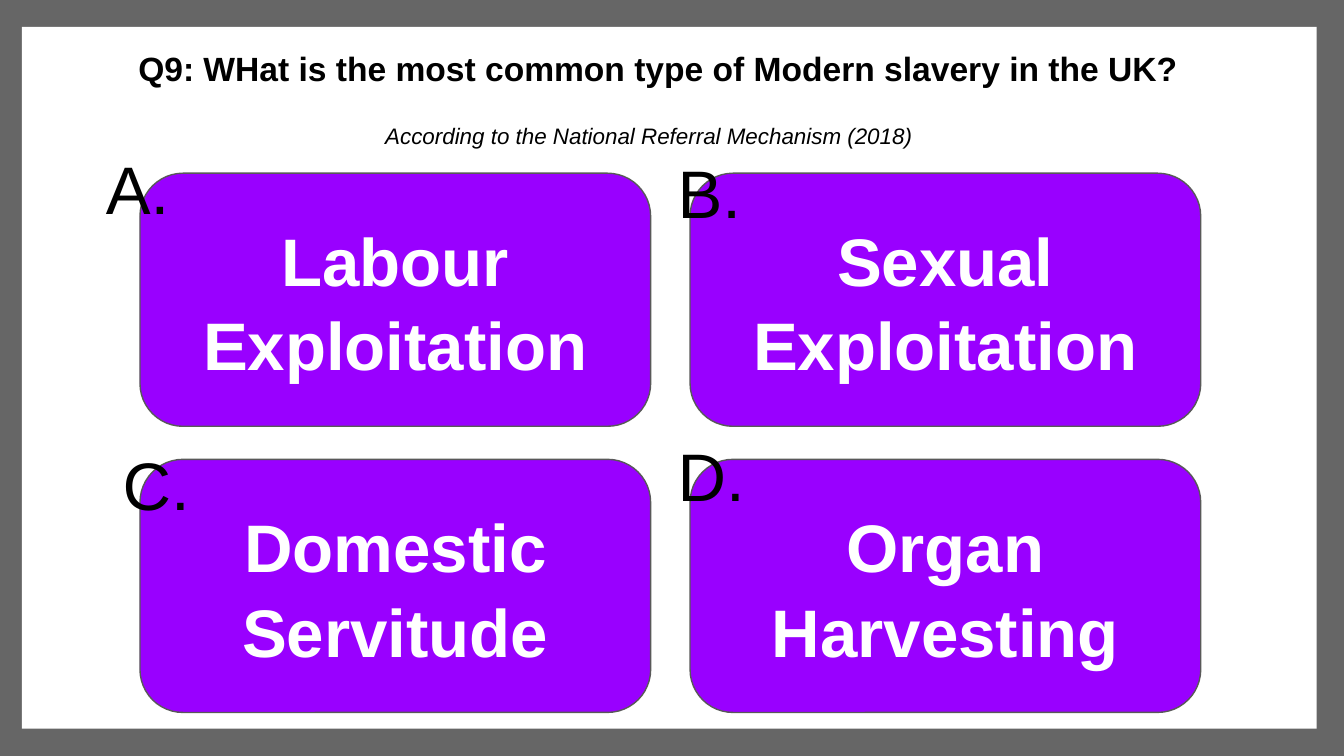
from pptx import Presentation
from pptx import util as u
from pptx.dml.color import RGBColor
from pptx.enum import shapes, text

COLOURS = {"frame": "666666", "paper": "FFFFFF", "answer": "9900FF",
           "outline": "595959", "ink": "000000"}


def write(box, words, size, colour="ink", bold=False, italic=False,
          align=text.PP_ALIGN.LEFT, anchor=text.MSO_ANCHOR.TOP):
    frame = box.text_frame
    frame.word_wrap = True
    frame.vertical_anchor = anchor
    frame.margin_left = frame.margin_right = u.Pt(7.2)
    frame.margin_top = frame.margin_bottom = u.Pt(7.2)
    para = frame.paragraphs[0]
    para.alignment = align
    para.line_spacing = 1.05
    span = para.add_run()
    span.text = words
    span.font.name = "Arial"
    span.font.size = u.Pt(size)
    span.font.bold = bold
    span.font.italic = italic
    span.font.color.rgb = RGBColor.from_string(COLOURS[colour])


class QuizPage:
    def __init__(self, page):
        self.page = page

    def panel(self, kind, left, top, width, height, fill, line=None):
        panel = self.page.shapes.add_shape(
            kind, u.Pt(left), u.Pt(top), u.Pt(width), u.Pt(height))
        panel.shadow.inherit = False
        panel.fill.solid()
        panel.fill.fore_color.rgb = RGBColor.from_string(COLOURS[fill])
        if line:
            panel.line.color.rgb = RGBColor.from_string(COLOURS[line])
            panel.line.width = u.Pt(0.75)
        else:
            panel.line.fill.background()
        return panel

    def rectangle(self, left, top, width, height, fill):
        self.panel(shapes.MSO_SHAPE.RECTANGLE, left, top, width, height, fill)

    def answer(self, words, left, top, width, height):
        card = self.panel(shapes.MSO_SHAPE.ROUNDED_RECTANGLE, left, top,
                          width, height, "answer", "outline")
        card.adjustments[0] = 0.17
        write(card, words, 36, "paper", bold=True,
              align=text.PP_ALIGN.CENTER, anchor=text.MSO_ANCHOR.MIDDLE)

    def label(self, words, left, top, width, height, size, **style):
        box = self.page.shapes.add_textbox(
            u.Pt(left), u.Pt(top), u.Pt(width), u.Pt(height))
        write(box, words, size, **style)


def main():
    deck = Presentation()
    deck.slide_width, deck.slide_height = u.Pt(720), u.Pt(405)
    quiz = QuizPage(deck.slides.add_slide(deck.slide_layouts[6]))

    # Grey frame around a white sheet
    quiz.rectangle(-1.5, 0, 721.5, 405, "frame")
    quiz.rectangle(11.7, 14.4, 693.6, 376, "paper")

    # Question
    quiz.label("Q9: WHat is the most common type of Modern slavery in the UK?",
               67, 17.3, 609, 38, 18, bold=True)

    # Answers in a two by two grid
    answers = ["Labour Exploitation", "Sexual Exploitation",
               "Domestic Servitude", "Organ Harvesting"]
    for index, words in enumerate(answers):
        row, column = divmod(index, 2)
        quiz.answer(words, 75 + column * 294.7, 92.8 + row * 153.3, 273.6, 135.6)

    # Source of the figures
    quiz.label("According to the National Referral Mechanism (2018)",
               199.3, 57.6, 307, 33, 12, italic=True)

    # Answer letters, placed by hand at the card corners
    letters = [("A.", 49.7, 69.8, 69), ("B.", 355.9, 71.6, 52),
               ("C.", 58.6, 228.4, 69), ("D.", 355.9, 223.4, 78)]
    for letter, left, top, width in letters:
        quiz.label(letter, left, top, width, 52, 36)

    deck.save("out.pptx")


if __name__ == "__main__":
    main()
